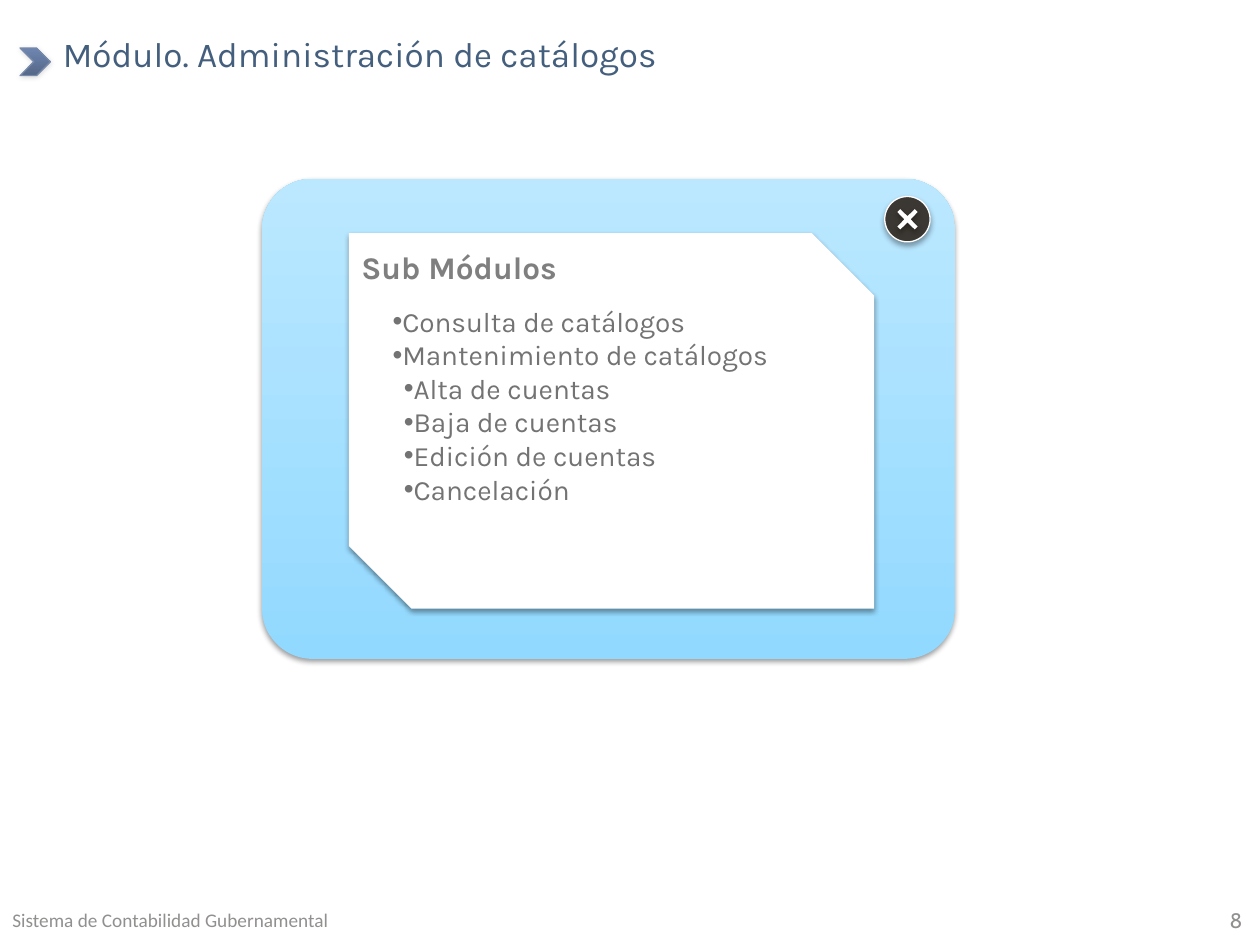
import lxml.etree
import pptx
import pptx.dml.color
import pptx.enum.shapes
import pptx.enum.text
import pptx.oxml
import pptx.oxml.ns
import pptx.util

Pt = pptx.util.Pt
SHAPES = pptx.enum.shapes.MSO_SHAPE
ALIGN = pptx.enum.text.PP_ALIGN
ANCHOR = pptx.enum.text.MSO_ANCHOR
qn = pptx.oxml.ns.qn


def color(value):
    return pptx.dml.color.RGBColor.from_string(value)


def style_text(paragraph, text, font_name, size, text_color):
    paragraph.text = text
    paragraph.font.name = font_name
    paragraph.font.size = Pt(size)
    paragraph.font.color.rgb = color(text_color)


presentation = pptx.Presentation()
presentation.slide_width = Pt(720)
presentation.slide_height = Pt(540)
slide = presentation.slides.add_slide(presentation.slide_layouts[6])

# Shapes from back to front: kind, box, fill (bottom and top color if gradient),
# line, adjustment, rotation, shadow (opacity %, distance)
shape_rows = [
    (SHAPES.CHEVRON, (11.5, 27.4, 17.3, 15.8), ("556787", "6E86B1"), "7689AA", None, 0, (15, 0.8)),
    (SHAPES.ROUNDED_RECTANGLE, (149.8, 102.2, 396, 274.3), ("92D9FF", "BBE8FF"), None, 0.105, 0, (38, 1.6)),
    (SHAPES.SNIP_2_DIAG_RECTANGLE, (199.4, 133.2, 300.2, 214.6), ("FFFFFF",), None, None, 0, (38, 1.6)),
    (SHAPES.OVAL, (505.6, 112.3, 25.9, 25.9), ("3B3732",), "FFFFFF", None, 0, (35, 1.8)),
    (SHAPES.MATH_PLUS, (509, 115.7, 19.2, 19.2), ("FFFFFF",), None, 0.126, 315, (35, 1.8)),
]
shapes = []
for kind, box, fill_colors, line_color, adjustment, rotation, shadow in shape_rows:
    shape = slide.shapes.add_shape(kind, *map(Pt, box))
    shape.rotation = rotation
    if adjustment is not None:
        shape.adjustments[0] = adjustment
    if len(fill_colors) == 2:
        shape.fill.gradient()
        shape.fill.gradient_angle = 90
        for stop, stop_color in zip(shape.fill.gradient_stops, fill_colors):
            stop.color.rgb = color(stop_color)
    else:
        shape.fill.solid()
        shape.fill.fore_color.rgb = color(fill_colors[0])
    if line_color:
        shape.line.color.rgb = color(line_color)
        shape.line.width = Pt(0.75)
    else:
        shape.line.fill.background()

    # Soft shadow straight below
    shape.shadow.inherit = False
    opacity, distance = shadow
    effects = shape._element.spPr.find(qn("a:effectLst"))
    outer = lxml.etree.SubElement(
        effects, qn("a:outerShdw"), blurRad=str(Pt(3.1)), dist=str(Pt(distance)),
        dir="5400000", rotWithShape="0")
    black = lxml.etree.SubElement(outer, qn("a:srgbClr"), val="000000")
    lxml.etree.SubElement(black, qn("a:alpha"), val=str(opacity * 1000))
    shapes.append(shape)

# Bulleted list in the white card, with its second level slightly indented
card_frame = shapes[2].text_frame
card_frame.word_wrap = True
card_frame.vertical_anchor = ANCHOR.TOP
card_frame.margin_top = Pt(22.8)
submodules = [
    ("Consulta de catálogos", 0),
    ("Mantenimiento de catálogos", 0),
    ("Alta de cuentas", 6.5),
    ("Baja de cuentas", 6.5),
    ("Edición de cuentas", 6.5),
    ("Cancelación", 6.5),
]
for index, (text, indent) in enumerate(submodules):
    paragraph = card_frame.paragraphs[0] if index == 0 else card_frame.add_paragraph()
    paragraph.alignment = ALIGN.LEFT
    properties = paragraph._p.get_or_add_pPr()
    properties.set("marL", str(Pt(indent)))
    properties.set("indent", "0")
    lxml.etree.SubElement(properties, qn("a:buFont"), typeface="Arial")
    lxml.etree.SubElement(properties, qn("a:buChar"), char="•")
    style_text(paragraph, text, "Karla", 16, "737373")

# Title, card heading, footer and slide number
text_rows = [
    ("Módulo. Administración de catálogos", (28.8, 15.1, 676.8, 45.4), "Karla", 20, "445F7D", False, ALIGN.LEFT, ANCHOR.TOP),
    ("Sub Módulos", (199.4, 145.4, 277.9, 14.4), "Karla", 18, "7F7F7F", True, ALIGN.LEFT, ANCHOR.MIDDLE),
    ("Sistema de Contabilidad Gubernamental", (0, 511.2, 408.2, 28.8), "Calibri", 11, "91908F", False, ALIGN.LEFT, ANCHOR.MIDDLE),
    ("8", (665.3, 511.9, 51.8, 28.1), "Cabin", 12, "91908F", False, ALIGN.RIGHT, ANCHOR.MIDDLE),
]
for text, box, font_name, size, text_color, bold, alignment, anchor in text_rows:
    text_frame = slide.shapes.add_textbox(*map(Pt, box)).text_frame
    text_frame.word_wrap = True
    text_frame.vertical_anchor = anchor
    paragraph = text_frame.paragraphs[0]
    paragraph.alignment = alignment
    style_text(paragraph, text, font_name, size, text_color)
    paragraph.font.bold = bold

presentation.save("out.pptx")
